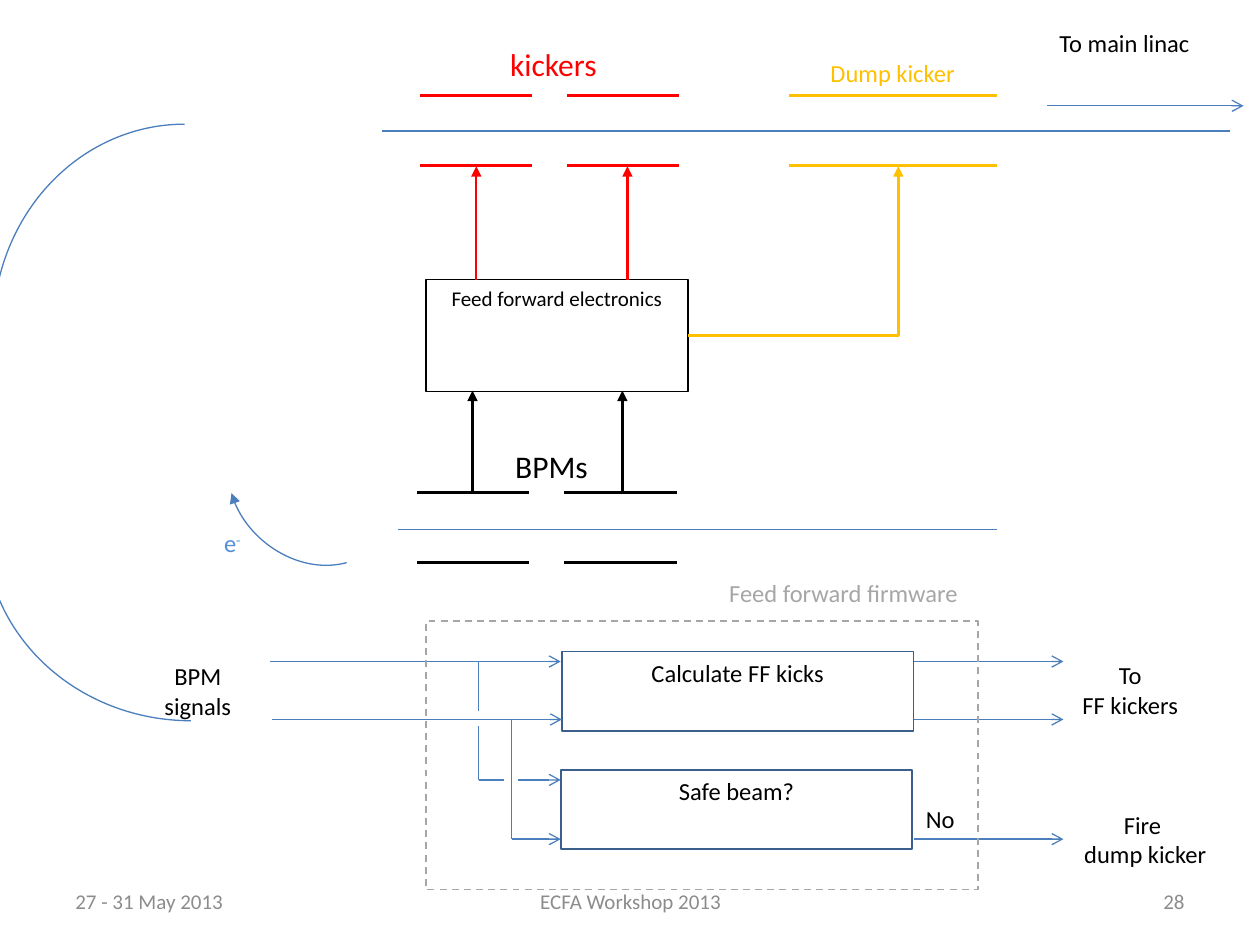
"""Build the feed forward scheme slide: beam line, electronics and firmware logic."""
from dataclasses import dataclass

from lxml import etree
from pptx import Presentation
from pptx.dml.color import RGBColor
from pptx.enum import dml, shapes, text
from pptx.oxml import ns
from pptx.util import Inches, Pt


@dataclass(frozen=True)
class Theme:
    font: str = "Calibri"
    black: str = "000000"
    red: str = "FF0000"
    amber: str = "FFC000"
    blue: str = "4B7EBC"
    border: str = "3A5F8C"
    electron: str = "558ED5"
    grey: str = "A6A6A6"
    footer: str = "8C8C8C"
    small: int = 12
    body: int = 14
    large: int = 18
    thin: float = 0.75
    medium: float = 1.25
    plate: float = 1.5
    thick: float = 1.75


THEME = Theme()
LEFT, CENTER, RIGHT = text.PP_ALIGN.LEFT, text.PP_ALIGN.CENTER, text.PP_ALIGN.RIGHT


def style_line(line, color, width):
    line.color.rgb = RGBColor.from_string(color)
    line.width = Pt(width)


def add_line(slide, start, end, color=THEME.blue, width=THEME.thin, head=None, tail=None,
             kind=shapes.MSO_CONNECTOR.STRAIGHT):
    """Join two points, with an optional arrowhead at either end."""
    points = [Inches(value) for value in (*start, *end)]
    connector = slide.shapes.add_connector(kind, *points)
    style_line(connector.line, color, width)
    for tag, arrow in (("a:headEnd", head), ("a:tailEnd", tail)):
        if arrow:
            etree.SubElement(connector.line._get_or_add_ln(), ns.qn(tag), type=arrow)
    etree.SubElement(connector._element.spPr, ns.qn("a:effectLst"))
    return connector


def write(shape, content, size=THEME.body, color=THEME.black, align=LEFT,
          anchor=text.MSO_ANCHOR.TOP):
    """Fill a shape with one formatted paragraph for each line of content."""
    frame = shape.text_frame
    frame.word_wrap = True
    frame.vertical_anchor = anchor
    frame.text = content
    for paragraph in frame.paragraphs:
        paragraph.alignment = align
        for run in paragraph.runs:
            run.font.name = THEME.font
            run.font.size = Pt(size)
            run.font.color.rgb = RGBColor.from_string(color)


def add_label(slide, box, content, **style):
    label = slide.shapes.add_textbox(*map(Inches, box))
    write(label, content, **style)
    return label


def add_outline(slide, box, color, width=1, kind=shapes.MSO_SHAPE.RECTANGLE):
    """Add an unfilled preset shape."""
    shape = slide.shapes.add_shape(kind, *map(Inches, box))
    shape.shadow.inherit = False
    shape.fill.background()
    style_line(shape.line, color, width)
    return shape


def add_plates(slide, left, width, top, color):
    """Add the pair of plates on both sides of a beam."""
    for y in (top, top + 0.555):
        add_line(slide, (left, y), (left + width, y), color, THEME.plate)


def add_electron_arrow(slide):
    """Add the curved arrow that shows the electron direction."""
    curve = add_line(slide, (2.68, 3.82), (1.91, 4.56), head="triangle",
                     kind=shapes.MSO_CONNECTOR.CURVE)
    properties = curve._element.spPr
    properties.find(ns.qn("a:prstGeom")).set("prst", "curvedConnector2")
    properties.find(ns.qn("a:xfrm")).set("rot", str(255 * 60000))
    label = add_label(slide, (1.68, 4.14, 1.34, 0.59), "e", color=THEME.electron)
    charge = label.text_frame.paragraphs[0].add_run()
    charge.text = "-"
    charge.font.name = THEME.font
    charge.font.size = Pt(THEME.body)
    charge.font.color.rgb = RGBColor.from_string(THEME.electron)
    charge._r.get_or_add_rPr().set("baseline", "30000")


def add_beam_line(slide):
    """Add the turnaround arcs, both beams and their kickers and BPMs."""
    for left, top, rotation in ((-0.12, 2.68, 180), (-0.17, 1.1, 270)):
        arc = add_outline(slide, (left, top, 3.27, 3.04), THEME.blue, THEME.thin,
                          shapes.MSO_SHAPE.ARC)
        arc.rotation = rotation
    add_line(slide, (3.16, 4.2), (7.91, 4.2))
    add_line(slide, (3.03, 1.04), (9.76, 1.04))
    for offset in (0, 1.17):
        add_plates(slide, 3.31 + offset, 0.89, 3.91, THEME.black)
        add_plates(slide, 3.33 + offset, 0.89, 0.76, THEME.red)
    add_plates(slide, 6.26, 1.65, 0.76, THEME.amber)
    add_label(slide, (3.99, 3.5, 0.85, 0.4), "BPMs", size=THEME.large)
    add_label(slide, (3.95, 0.31, 0.94, 0.4), "kickers", size=THEME.large, color=THEME.red)
    add_label(slide, (6.26, 0.41, 1.65, 0.34), "Dump kicker", color=THEME.amber, align=CENTER)
    add_label(slide, (8.31, 0.17, 1.34, 0.34), "To main linac")
    add_line(slide, (8.31, 0.84), (9.87, 0.84), tail="arrow")
    add_electron_arrow(slide)


def add_electronics(slide):
    """Add the electronics box with its inputs and outputs."""
    box = add_outline(slide, (3.38, 2.22, 2.08, 0.89), THEME.black, THEME.thin)
    write(box, "Feed forward electronics", size=THEME.small, align=CENTER)
    for x in (3.75, 4.94):
        add_line(slide, (x, 3.91), (x, 3.1), THEME.black, THEME.medium, tail="triangle")
    for x in (3.78, 4.98):
        add_line(slide, (x, 2.22), (x, 1.32), THEME.red, THEME.medium, tail="triangle")
    dump = add_line(slide, (5.46, 2.66), (7.13, 1.32), THEME.amber, THEME.thick,
                    tail="triangle", kind=shapes.MSO_CONNECTOR.ELBOW)
    geometry = dump._element.spPr.find(ns.qn("a:prstGeom"))
    guides = geometry.find(ns.qn("a:avLst"))
    etree.SubElement(guides, ns.qn("a:gd"), name="adj1", fmla="val 100000")


def add_firmware(slide):
    """Add the firmware logic with its signals and decisions."""
    for left, top, name in ((4.46, 5.17, "Calculate FF kicks"), (4.45, 6.11, "Safe beam?")):
        add_outline(slide, (left, top, 2.79, 0.63), THEME.border)
        add_label(slide, (left, top, 2.79, 0.34), name, align=CENTER)
    for y in (5.25, 5.71, 6.66):
        add_line(slide, (7.25, y), (8.44, y), tail="arrow")
    inputs = (((2.14, 5.25), (4.45, 5.25)), ((2.16, 5.71), (4.46, 5.71)),
              ((4.06, 6.66), (4.45, 6.66)), ((4.11, 6.19), (4.45, 6.19)))
    for start, end in inputs:
        add_line(slide, start, end, tail="arrow")
    branches = (((4.06, 5.71), (4.06, 6.66)), ((4, 6.19), (3.8, 6.19)),
                ((3.8, 6.19), (3.8, 5.76)), ((3.8, 5.64), (3.8, 5.25)))
    for start, end in branches:
        add_line(slide, start, end)
    add_label(slide, (7.25, 6.33, 0.51, 0.34), "No")
    for box, content in (((8.44, 5.19, 1.06, 0.57), "To\nFF kickers"),
                         ((8.46, 6.38, 1.26, 0.57), "Fire \ndump kicker"),
                         ((0.98, 5.2, 1.18, 0.57), "BPM\nsignals")):
        add_label(slide, box, content, align=CENTER)
    frame = add_outline(slide, (3.38, 4.93, 4.38, 2.13), THEME.grey)
    frame.line.dash_style = dml.MSO_LINE.DASH
    add_label(slide, (5.63, 4.54, 2.13, 0.34), "Feed forward firmware", color=THEME.grey,
              align=CENTER)


def add_footer(slide):
    """Add the date, the event and the slide number."""
    for left, width, content, align in ((0.5, 2.33, "27 - 31 May 2013", LEFT),
                                        (3.42, 3.17, "ECFA Workshop 2013", CENTER),
                                        (7.17, 2.33, "28", RIGHT)):
        add_label(slide, (left, 6.95, width, 0.4), content, size=THEME.small,
                  color=THEME.footer, align=align, anchor=text.MSO_ANCHOR.MIDDLE)


def main():
    presentation = Presentation()
    presentation.slide_width, presentation.slide_height = Inches(10), Inches(7.5)
    slide = presentation.slides.add_slide(presentation.slide_layouts[6])
    add_beam_line(slide)
    add_electronics(slide)
    add_firmware(slide)
    add_footer(slide)
    presentation.save("out.pptx")


if __name__ == "__main__":
    main()
